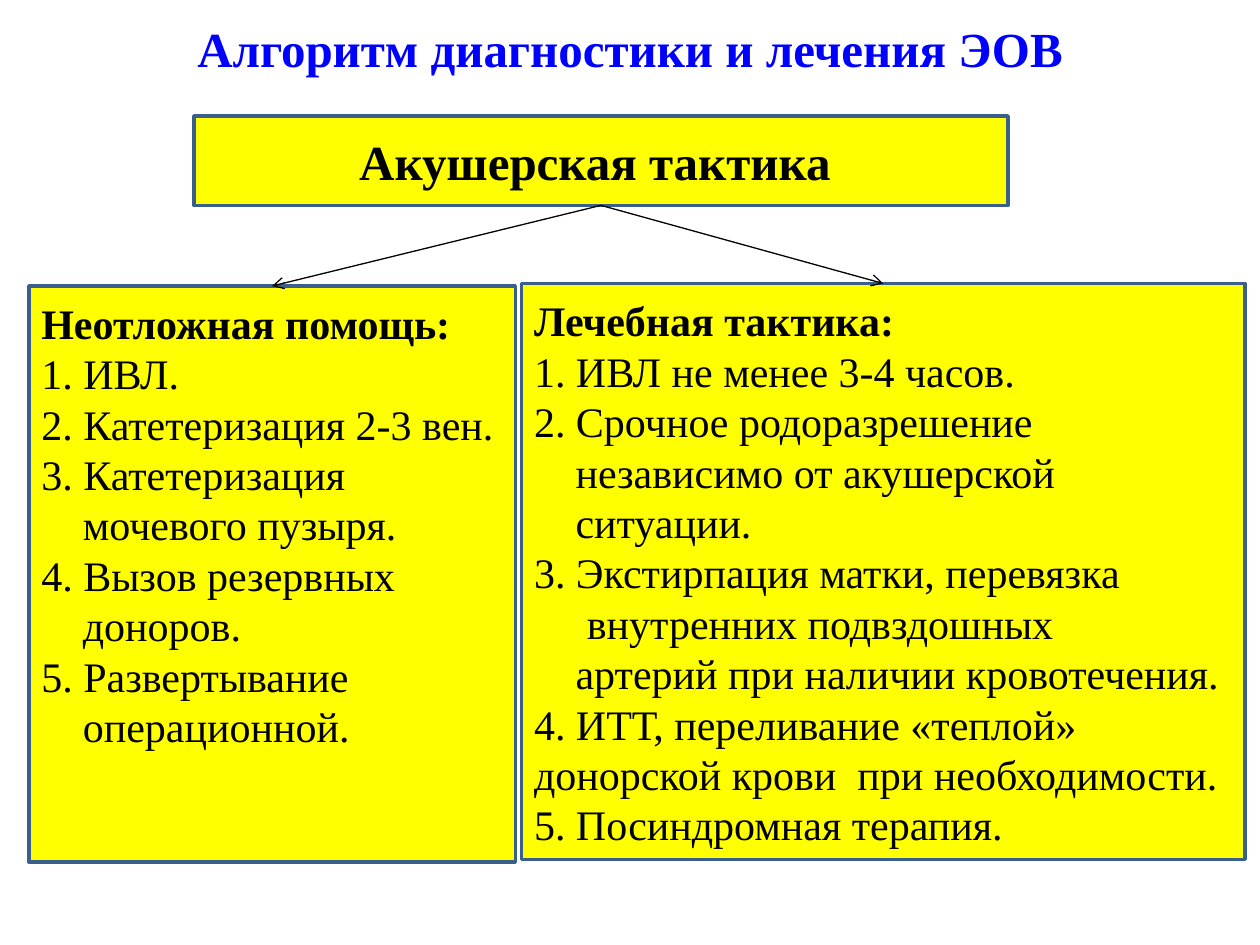
from lxml import etree
from pptx import Presentation
from pptx import util as u
from pptx.dml.color import RGBColor
from pptx.enum import shapes, text
from pptx.oxml import ns

BLUE = RGBColor(0x00, 0x00, 0xFF)
BLACK = RGBColor(0x00, 0x00, 0x00)
YELLOW = RGBColor(0xFF, 0xFF, 0x00)
BORDER = RGBColor(0x3A, 0x5F, 0x8C)

# Each line is its left indent in inches and its wording.
FLUSH, HANGING, DEEP = 0, 0.33, 0.42
EMERGENCY_CARE = [
    (FLUSH, "1. ИВЛ."),
    (FLUSH, "2. Катетеризация 2-3 вен."),
    (FLUSH, "3. Катетеризация"),
    (HANGING, "мочевого пузыря."),
    (FLUSH, "4. Вызов резервных"),
    (HANGING, "доноров."),
    (FLUSH, "5. Развертывание"),
    (HANGING, "операционной."),
]
TREATMENT = [
    (FLUSH, "1. ИВЛ не менее 3-4 часов."),
    (FLUSH, "2. Срочное родоразрешение"),
    (HANGING, "независимо от акушерской"),
    (HANGING, "ситуации."),
    (FLUSH, "3. Экстирпация матки, перевязка"),
    (DEEP, "внутренних подвздошных"),
    (HANGING, "артерий при наличии кровотечения."),
    (FLUSH, "4. ИТТ, переливание «теплой» донорской крови  при необходимости."),
    (FLUSH, "5. Посиндромная терапия."),
]


class Scheme:
    font = "Times New Roman"
    heading_size = 28
    body_size = 24

    def __init__(self, slide):
        self.slide = slide

    def format(self, paragraph, size, color=BLACK, bold=False):
        for run in paragraph.runs:
            run.font.name = self.font
            run.font.size = u.Pt(size)
            run.font.bold = bold
            run.font.color.rgb = color

    def title(self, wording, left, top, width, height):
        title = self.slide.shapes.add_textbox(*map(u.Inches, (left, top, width, height)))
        title.text_frame.word_wrap = True
        title.text_frame.text = wording
        paragraph = title.text_frame.paragraphs[0]
        paragraph.alignment = text.PP_ALIGN.CENTER
        self.format(paragraph, self.heading_size, BLUE, bold=True)

    def box(self, left, top, width, height):
        box = self.slide.shapes.add_shape(
            shapes.MSO_SHAPE.FLOWCHART_PROCESS,
            *map(u.Inches, (left, top, width, height)))
        box.shadow.inherit = False
        box.fill.solid()
        box.fill.fore_color.rgb = YELLOW
        box.line.color.rgb = BORDER
        box.line.width = u.Pt(2)
        box.text_frame.word_wrap = True
        box.text_frame.vertical_anchor = text.MSO_ANCHOR.MIDDLE
        return box

    def heading_box(self, wording, *place):
        box = self.box(*place)
        box.text_frame.text = wording
        paragraph = box.text_frame.paragraphs[0]
        paragraph.alignment = text.PP_ALIGN.CENTER
        self.format(paragraph, self.heading_size, bold=True)
        return box

    def list_box(self, heading, lines, *place):
        box = self.box(*place)
        frame = box.text_frame
        frame.vertical_anchor = text.MSO_ANCHOR.TOP
        frame.margin_top = u.Inches(0.09)
        frame.text = "\n".join([heading] + [wording for _, wording in lines])
        indents = [FLUSH] + [indent for indent, _ in lines]
        for row, (paragraph, indent) in enumerate(zip(frame.paragraphs, indents)):
            paragraph.alignment = text.PP_ALIGN.LEFT
            self.format(paragraph, self.body_size, bold=row == 0)
            if indent:
                properties = paragraph._p.get_or_add_pPr()
                properties.set("marL", str(u.Inches(indent)))
                properties.set("indent", "0")
        return box

    def arrow(self, source, target):
        """Join the bottom of source to the top of target."""
        arrow = self.slide.shapes.add_connector(shapes.MSO_CONNECTOR.STRAIGHT, 0, 0, 0, 0)
        arrow.begin_connect(source, 2)
        arrow.end_connect(target, 0)
        arrow.line.color.rgb = BLACK
        arrow.line.width = u.Pt(0.75)
        etree.SubElement(arrow.line._get_or_add_ln(), ns.qn("a:tailEnd"), type="arrow")
        etree.SubElement(arrow._element.spPr, ns.qn("a:effectLst"))


def main():
    presentation = Presentation()
    presentation.slide_width = u.Inches(10)
    presentation.slide_height = u.Inches(7.5)
    scheme = Scheme(presentation.slides.add_slide(presentation.slide_layouts[6]))

    scheme.title("Алгоритм диагностики и лечения ЭОВ", 0, 0.1, 10, 0.57)
    tactics = scheme.heading_box("Акушерская тактика ", 1.54, 0.92, 6.46, 0.71)
    emergency = scheme.list_box("Неотложная помощь:", EMERGENCY_CARE, 0.23, 2.27, 3.86, 4.57)
    treatment = scheme.list_box("Лечебная тактика:", TREATMENT, 4.14, 2.25, 5.74, 4.57)
    for branch in (emergency, treatment):
        scheme.arrow(tactics, branch)

    presentation.save("out.pptx")


if __name__ == "__main__":
    main()
